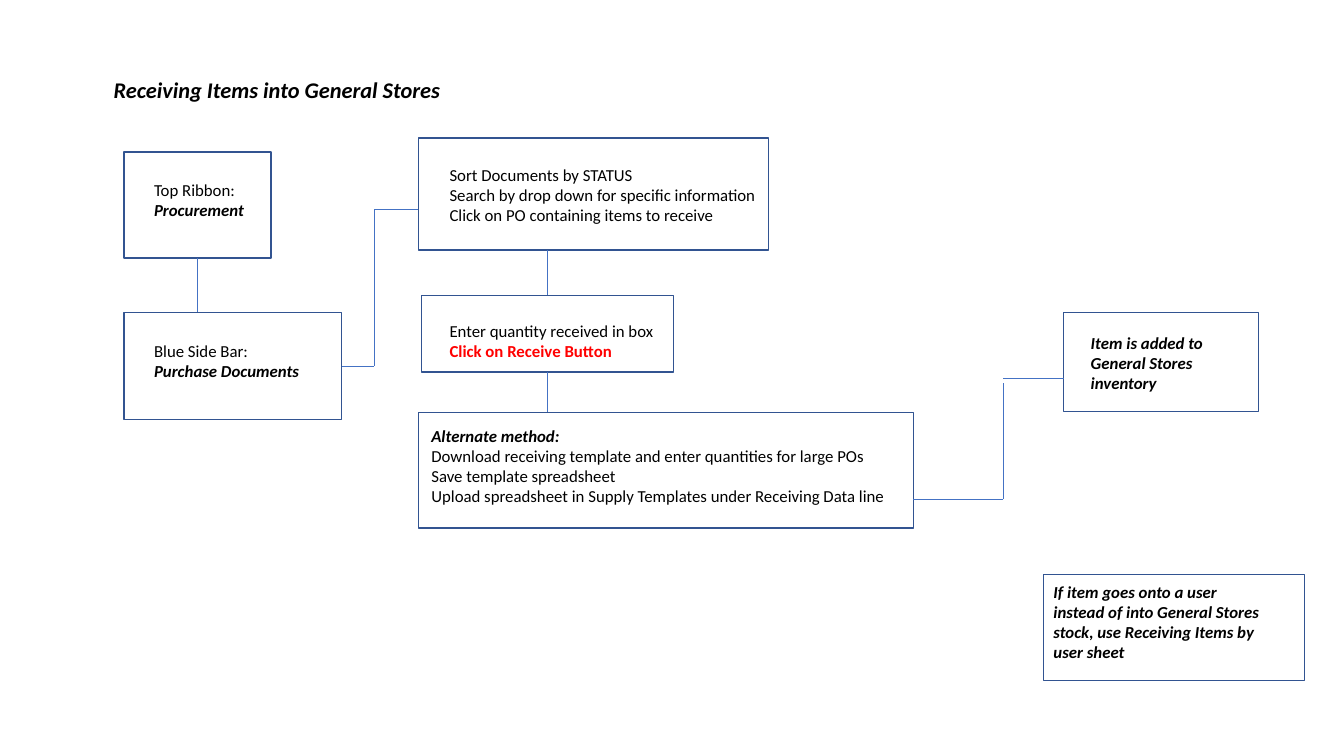
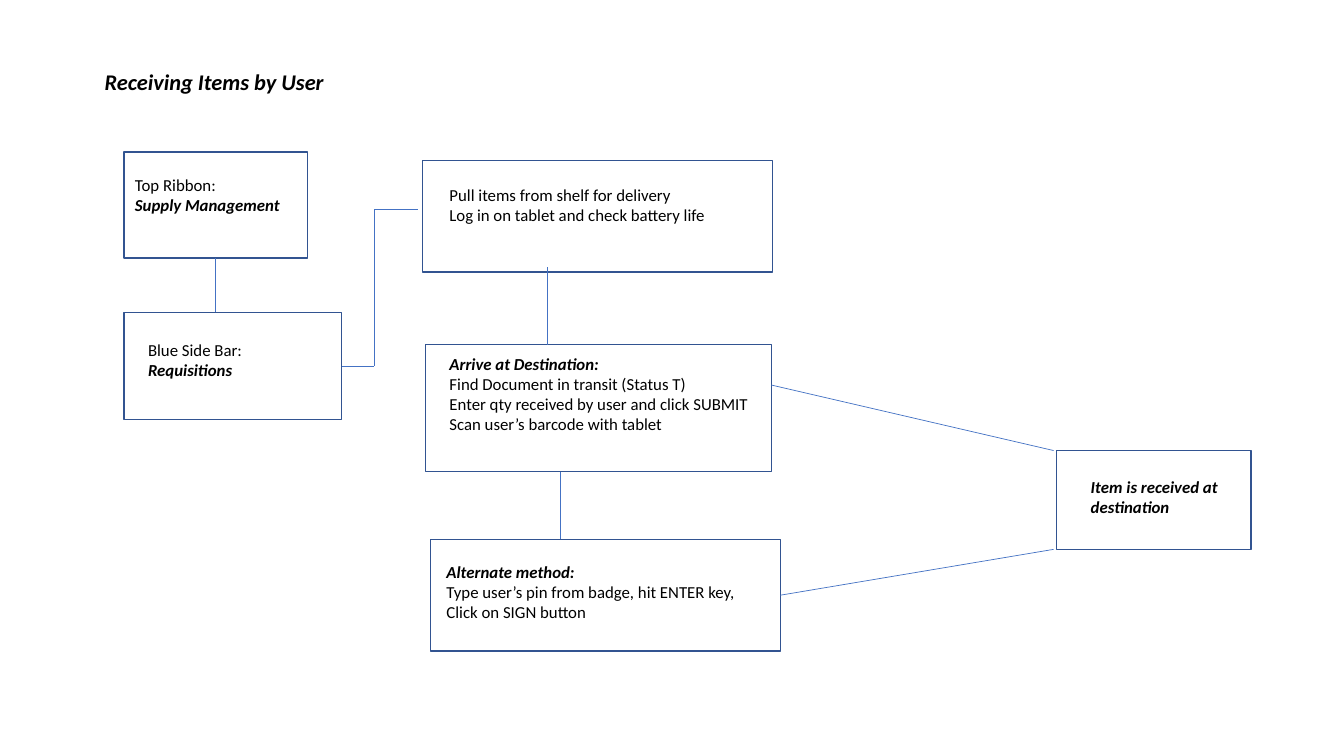
"""Build two flowchart slides about receiving items into stores and by user."""
import lxml.etree
import pptx
import pptx.dml.color
import pptx.enum.shapes
import pptx.oxml.ns
import pptx.util


class Theme:
    font = "Calibri"
    title_size = pptx.util.Pt(16)
    body_size = pptx.util.Pt(12)
    box_width = pptx.util.Pt(1)
    line_width = pptx.util.Pt(0.5)
    text = pptx.dml.color.RGBColor.from_string("000000")
    alert = pptx.dml.color.RGBColor.from_string("FF0000")
    border = pptx.dml.color.RGBColor.from_string("325491")
    link = pptx.dml.color.RGBColor.from_string("4472C4")


STYLES = {
    "plain": (False, False, Theme.text),
    "strong": (True, True, Theme.text),
    "alert": (True, False, Theme.alert),
}
PX_PER_INCH = 100
BOTTOM, RIGHT, TOP = 2, 3, 0


def px(*lengths):
    return [pptx.util.Emu(n * 914400 // PX_PER_INCH) for n in lengths]


def add_text(s, place, lines, size):
    tf = s.shapes.add_textbox(*px(*place)).text_frame
    tf.word_wrap = True
    for i, (style, text) in enumerate(lines):
        p = tf.paragraphs[0] if i == 0 else tf.add_paragraph()
        p.text = text
        p.font.name, p.font.size = Theme.font, size
        p.font.bold, p.font.italic, p.font.color.rgb = STYLES[style]


SLIDES = [
    {
        "title": ("Receiving Items into General Stores", (103, 71, 360, 37)),
        "boxes": {
            "ribbon": (123, 151, 146, 105),
            "sidebar": (123, 310, 216, 106),
            "sort": (415, 137, 347, 111),
            "enter": (418, 293, 250, 76),
            "alternate": (415, 409, 491, 115),
            "user note": (1035, 570, 259, 105),
            "result": (1055, 310, 193, 98),
        },
        "texts": [
            ((143, 173, 124, 50), [("plain", "Top Ribbon:"), ("strong", "Procurement")]),
            ((143, 333, 180, 50), [("plain", "Blue Side Bar:"), ("strong", "Purchase Documents")]),
            ((436, 158, 331, 71), [
                ("plain", "Sort Documents by STATUS"),
                ("plain", "Search by drop down for specific information"),
                ("plain", "Click on PO containing items to receive"),
            ]),
            ((436, 313, 232, 50), [
                ("plain", "Enter quantity received in box"),
                ("alert", "Click on Receive Button"),
            ]),
            ((418, 417, 484, 91), [
                ("strong", "Alternate method:"),
                ("plain", "Download receiving template and enter quantities for large POs"),
                ("plain", "Save template spreadsheet"),
                ("plain", "Upload spreadsheet in Supply Templates under Receiving Data line"),
            ]),
            ((1035, 572, 228, 91), [
                ("strong", "If item goes onto a user instead of into General Stores stock, "
                           "use Receiving Items by user sheet"),
            ]),
            ((1072, 325, 146, 71), [("strong", "Item is added to General Stores inventory")]),
        ],
        "links": [
            (("ribbon", BOTTOM), (196, 310)),
            (("sidebar", RIGHT), (371, 363)),
            ((371, 208), (371, 363)),
            ((371, 208), (415, 208)),
            ((543, 248), ("enter", TOP)),
            (("enter", BOTTOM), (543, 409)),
            ((906, 495), (995, 495)),
            ((995, 380), (995, 495)),
            ((1055, 375), (995, 375)),
        ],
    },
    {
        "title": ("Receiving Items by User", (94, 63, 260, 37)),
        "boxes": {
            "ribbon": (123, 151, 182, 105),
            "sidebar": (123, 310, 216, 106),
            "pull": (419, 159, 347, 111),
            "arrive": (422, 342, 343, 126),
            "alternate": (427, 535, 347, 111),
            "result": (1048, 447, 193, 98),
        },
        "texts": [
            ((124, 168, 180, 50), [("plain", "Top Ribbon:"), ("strong", "Supply Management")]),
            ((137, 332, 130, 50), [("plain", "Blue Side Bar:"), ("strong", "Requisitions")]),
            ((436, 178, 290, 50), [
                ("plain", "Pull items from shelf for delivery"),
                ("plain", "Log in on tablet and check battery life"),
            ]),
            ((436, 346, 343, 91), [
                ("strong", "Arrive at Destination:"),
                ("plain", "Find Document in transit (Status T)"),
                ("plain", "Enter qty received by user and click SUBMIT"),
                ("plain", "Scan user’s barcode with tablet"),
            ]),
            ((433, 552, 343, 71), [
                ("strong", "Alternate method:"),
                ("plain", "Type user’s pin from badge, hit ENTER key,"),
                ("plain", "Click on SIGN button"),
            ]),
            ((1072, 468, 146, 50), [("strong", "Item is received at destination")]),
        ],
        "links": [
            (("ribbon", BOTTOM), (214, 310)),
            (("sidebar", RIGHT), (371, 363)),
            ((371, 208), (371, 363)),
            ((371, 208), (415, 208)),
            ((543, 265), (543, 342)),
            ((556, 468), (556, 535)),
            ((1045, 447), (765, 382)),
            (("alternate", RIGHT), (1045, 545)),
        ],
    },
]

prs = pptx.Presentation()
prs.slide_width, prs.slide_height = px(1333, 750)

for slide in SLIDES:
    s = prs.slides.add_slide(prs.slide_layouts[6])
    title, place = slide["title"]
    add_text(s, place, [("strong", title)], Theme.title_size)

    boxes = {}
    for name, place in slide["boxes"].items():
        sp = s.shapes.add_shape(pptx.enum.shapes.MSO_SHAPE.RECTANGLE, *px(*place))
        sp.shadow.inherit = False
        sp.fill.background()
        sp.line.color.rgb = Theme.border
        sp.line.width = Theme.box_width
        boxes[name] = sp

    for place, lines in slide["texts"]:
        add_text(s, place, lines, Theme.body_size)

    for begin, end in slide["links"]:
        begin_joined, end_joined = begin[0] in boxes, end[0] in boxes
        start = end if begin_joined else begin
        stop = begin if end_joined else end
        cx = s.shapes.add_connector(
            pptx.enum.shapes.MSO_CONNECTOR.STRAIGHT, *px(*start, *stop))
        if begin_joined:
            cx.begin_connect(boxes[begin[0]], begin[1])
        if end_joined:
            cx.end_connect(boxes[end[0]], end[1])
        cx.line.color.rgb = Theme.link
        cx.line.width = Theme.line_width
        lxml.etree.SubElement(cx._element.spPr, pptx.oxml.ns.qn("a:effectLst"))

prs.save("out.pptx")
